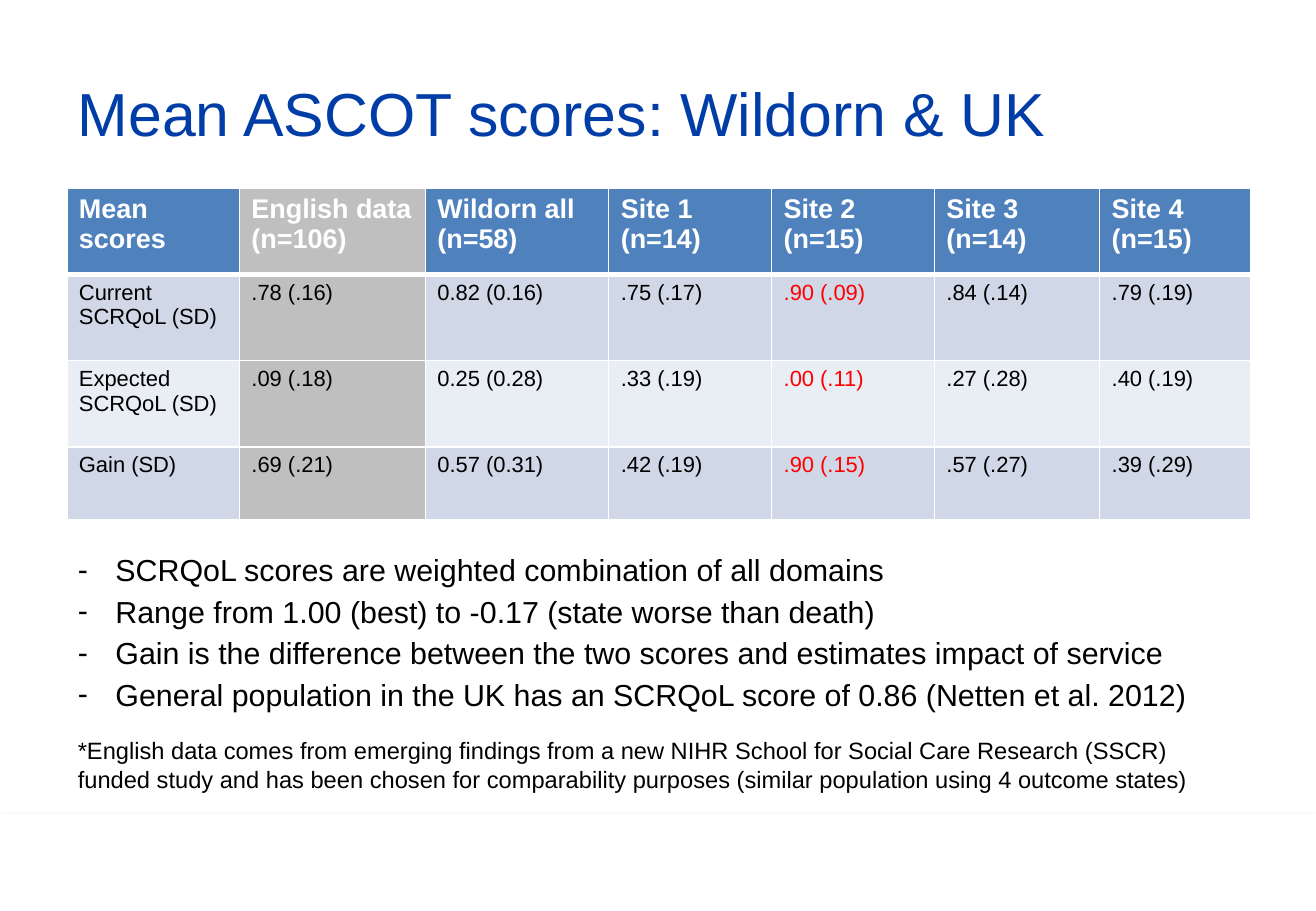
from lxml.etree import SubElement
from pptx import Presentation
from pptx.dml.color import RGBColor
from pptx.enum.shapes import MSO_SHAPE
from pptx.enum.text import MSO_ANCHOR, MSO_AUTO_SIZE, PP_ALIGN
from pptx.oxml import parse_xml
from pptx.oxml.ns import nsdecls, qn
from pptx.util import Inches, Pt

HEADS = ["Mean scores", "English data (n=106)", "Wildorn all (n=58)",
         "Site 1 (n=14)", "Site 2 (n=15)", "Site 3 (n=14)", "Site 4 (n=15)"]
SCORES = [
    ["Current SCRQoL (SD)", ".78 (.16)", "0.82 (0.16)", ".75 (.17)",
     ".90 (.09)", ".84 (.14)", ".79 (.19)"],
    ["Expected SCRQoL (SD)", ".09 (.18)", "0.25 (0.28)", ".33 (.19)",
     ".00 (.11)", ".27 (.28)", ".40 (.19)"],
    ["Gain (SD)", ".69 (.21)", "0.57 (0.31)", ".42 (.19)",
     ".90 (.15)", ".57 (.27)", ".39 (.29)"],
]
WIDTHS = [1.42, 1.53, 1.51, 1.34, 1.34, 1.36, 1.24]
HEIGHTS = [0.71, 0.71, 0.71, 0.6]
ENGLISH, SITE_TWO = 1, 4
POINTS = [
    "SCRQoL scores are weighted combination of all domains",
    "Range from 1.00 (best) to -0.17 (state worse than death)",
    "Gain is the difference between the two scores and estimates impact of service",
    "General population in the UK has an SCRQoL score of 0.86 (Netten et al. 2012)",
]
NOTE = ("*English data comes from emerging findings from a new NIHR School for "
        "Social Care Research (SSCR) funded study and has been chosen for "
        "comparability purposes (similar population using 4 outcome states)")


def paint(target, color):
    """Set a font colour or a solid fill from a hex string."""
    if hasattr(target, "solid"):
        target.solid()
        target.fore_color.rgb = RGBColor.from_string(color)
    else:
        target.color.rgb = RGBColor.from_string(color)


def style(para, size, color="000000", bold=False):
    """Format a whole paragraph."""
    font = para.font
    font.name, font.size, font.bold = "Arial", Pt(size), bold
    paint(font, color)


def place(shape, box):
    """Move a shape to a box given in inches."""
    shape.left, shape.top, shape.width, shape.height = map(Inches, box)


def add_band(slide, box):
    """Lay the white footer band with its faint shadow behind the text."""
    band = slide.shapes.add_shape(MSO_SHAPE.RECTANGLE, *map(Inches, box))
    paint(band.fill, "FFFFFF")
    band.line.fill.background()
    band.shadow.inherit = False
    effects = band.element.spPr.find(qn("a:effectLst"))
    effects.append(parse_xml(
        f'<a:outerShdw {nsdecls("a")} blurRad="{Pt(3.1)}" dist="{Pt(1.8)}" '
        'dir="5400000" rotWithShape="0"><a:srgbClr val="000000">'
        '<a:alpha val="35000"/></a:srgbClr></a:outerShdw>'))
    slide.shapes.title.element.addprevious(band.element)


def add_title(slide, box):
    """Fill the title placeholder."""
    title = slide.shapes.title
    place(title, box)
    frame = title.text_frame
    frame.text = "Mean ASCOT scores: Wildorn & UK"
    frame.vertical_anchor = MSO_ANCHOR.MIDDLE
    frame.auto_size = MSO_AUTO_SIZE.NONE
    para = frame.paragraphs[0]
    para.alignment = PP_ALIGN.LEFT
    style(para, 36, "003DA6")


def add_rules(cell, row):
    """Draw white cell borders, thicker under the header."""
    props = cell._tc.get_or_add_tcPr()
    for side in "LRTB":
        thick = (row, side) in [(0, "B"), (1, "T")]
        props.append(parse_xml(
            f'<a:ln{side} {nsdecls("a")} w="{Pt(3 if thick else 1)}"><a:solidFill>'
            f'<a:srgbClr val="FFFFFF"/></a:solidFill></a:ln{side}>'))


def add_scores(slide, box):
    """Build the table of mean scores."""
    rows = [HEADS] + SCORES
    table = slide.shapes.add_table(
        len(rows), len(HEADS), *map(Inches, box)).table
    for col, width in zip(table.columns, WIDTHS):
        col.width = Inches(width)
    for line, height in zip(table.rows, HEIGHTS):
        line.height = Inches(height)
    fills = ["4F81BD", "D0D8E8", "E9EDF4", "D0D8E8"]
    for row, texts in enumerate(rows):
        for col, text in enumerate(texts):
            cell = table.cell(row, col)
            cell.text = text
            add_rules(cell, row)
            paint(cell.fill, "BFBFBF" if col == ENGLISH else fills[row])
            para = cell.text_frame.paragraphs[0]
            if row == 0:
                style(para, 16, "FFFFFF", True)
            else:
                style(para, 13, "FF0000" if col == SITE_TWO else "000000")


def add_points(slide, box):
    """Fill the body placeholder with dashed points and a note."""
    body = slide.placeholders[1]
    place(body, box)
    frame = body.text_frame
    frame.auto_size = MSO_AUTO_SIZE.NONE
    frame.text = "\n".join(POINTS + [NOTE])
    *points, note = frame.paragraphs
    for para in points:
        props = para._p.get_or_add_pPr()
        props.set("marL", str(Inches(0.31)))
        props.set("indent", str(-Inches(0.31)))
        SubElement(props, qn("a:buChar"), char="-")
        para.space_before, para.space_after = Pt(0), Pt(3)
        style(para, 18)
    props = note._p.get_or_add_pPr()
    props.set("marL", "0")
    props.set("indent", "0")
    SubElement(props, qn("a:buNone"))
    note.space_before = Pt(11)
    style(note, 14)


def main():
    """Build and save the slide."""
    deck = Presentation()
    deck.slide_width, deck.slide_height = Inches(10.83), Inches(7.5)
    slide = deck.slides.add_slide(deck.slide_layouts[1])
    add_band(slide, (0, 6.7, 10.83, 0.8))
    add_title(slide, (0.54, 0.3, 9.75, 1.25))
    add_scores(slide, (0.55, 1.55, sum(WIDTHS), sum(HEIGHTS)))
    add_points(slide, (0.54, 4.49, 9.75, 2.82))
    deck.save("out.pptx")


if __name__ == "__main__":
    main()
